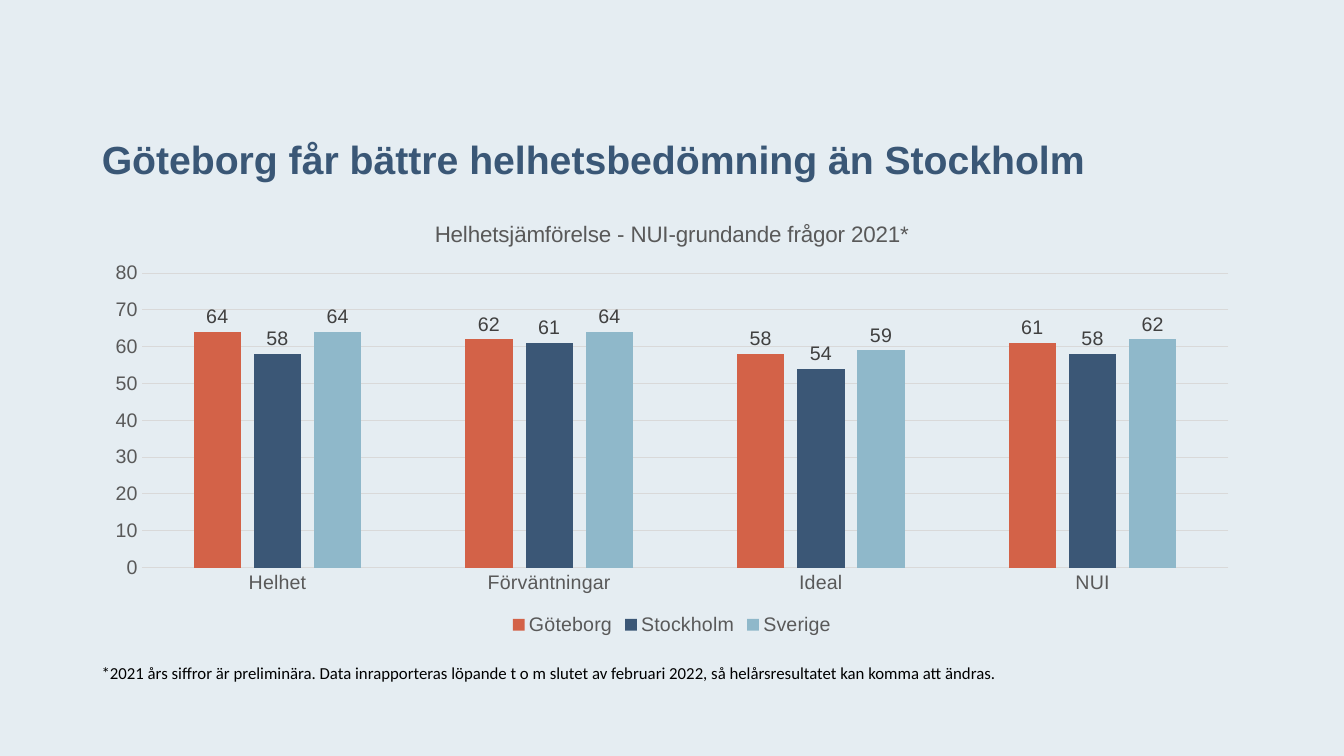
from pptx import Presentation
from pptx.chart.data import CategoryChartData
from pptx.dml.color import RGBColor
from pptx.enum.chart import (XL_CHART_TYPE, XL_LABEL_POSITION,
                             XL_LEGEND_POSITION, XL_TICK_MARK)
from pptx.enum.text import MSO_ANCHOR, PP_ALIGN
from pptx.util import Pt

COLUMN = XL_CHART_TYPE.COLUMN_CLUSTERED
OUTSIDE = XL_LABEL_POSITION.OUTSIDE_END
BELOW = XL_LEGEND_POSITION.BOTTOM
NO_TICK = XL_TICK_MARK.NONE
BOTTOM = MSO_ANCHOR.BOTTOM
LEFT = PP_ALIGN.LEFT

PALE = RGBColor(0xE5, 0xED, 0xF2)
NAVY = RGBColor(0x3A, 0x57, 0x76)
BLACK = RGBColor(0, 0, 0)
GREY = RGBColor(0x59, 0x59, 0x59)
DARK = RGBColor(0x40, 0x40, 0x40)
GRID = RGBColor(0xD9, 0xD9, 0xD9)

GROUPS = ["Helhet", "Förväntningar", "Ideal", "NUI"]
CITIES = [
    ("Göteborg", (64, 62, 58, 61), RGBColor(0xD3, 0x62, 0x48)),
    ("Stockholm", (58, 61, 54, 58), RGBColor(0x3B, 0x57, 0x76)),
    ("Sverige", (64, 64, 59, 62), RGBColor(0x8F, 0xB8, 0xCA)),
]


def set_font(font, size, color, name="Arial", bold=False):
    font.size = Pt(size)
    font.name = name
    font.bold = bold
    font.color.rgb = color


def set_line(line):
    line.color.rgb = GRID
    line.width = Pt(0.75)


def add_title(slide, left, top, width, height):
    title = slide.shapes.title
    title.left, title.top = Pt(left), Pt(top)
    title.width, title.height = Pt(width), Pt(height)
    frame = title.text_frame
    frame.text = "Göteborg får bättre helhetsbedömning än Stockholm"
    frame.vertical_anchor = BOTTOM
    para = frame.paragraphs[0]
    para.alignment = LEFT
    para.line_spacing = Pt(31)
    set_font(para.runs[0].font, 28, NAVY, bold=True)


def add_bars(slide, left, top, width, height):
    data = CategoryChartData()
    data.categories = GROUPS
    for city, scores, _ in CITIES:
        data.add_series(city, scores)
    chart = slide.shapes.add_chart(COLUMN, Pt(left), Pt(top), Pt(width),
                                   Pt(height), data).chart
    set_font(chart.font, 10, BLACK)

    # Heading
    chart.has_title = True
    head = chart.chart_title
    head.include_in_layout = False
    head.text_frame.text = "Helhetsjämförelse - NUI-grundande frågor 2021*"
    set_font(head.text_frame.paragraphs[0].runs[0].font, 16, GREY)

    # Legend
    chart.has_legend = True
    chart.legend.position = BELOW
    chart.legend.include_in_layout = False
    set_font(chart.legend.font, 14, GREY)

    # Axes
    for axis in (chart.category_axis, chart.value_axis):
        axis.major_tick_mark = axis.minor_tick_mark = NO_TICK
        set_font(axis.tick_labels.font, 14, GREY)
    set_line(chart.category_axis.format.line)
    scale = chart.value_axis
    scale.minimum_scale, scale.maximum_scale = 0, 80
    scale.major_unit = 10
    scale.format.line.fill.background()
    set_line(scale.major_gridlines.format.line)

    # Bars and their values
    plot = chart.plots[0]
    plot.gap_width = 219
    plot.overlap = -27
    plot.vary_by_categories = False
    for bars, (_, _, color) in zip(plot.series, CITIES):
        bars.format.fill.solid()
        bars.format.fill.fore_color.rgb = color
        labels = bars.data_labels
        labels.show_value = True
        labels.position = OUTSIDE
        set_font(labels.font, 14, DARK)


def add_note(slide, left, top, width, height):
    box = slide.shapes.add_textbox(Pt(left), Pt(top), Pt(width), Pt(height))
    frame = box.text_frame
    frame.word_wrap = True
    frame.text = ("*2021 års siffror är preliminära. Data inrapporteras löpande "
                  "t o m slutet av februari 2022, så helårsresultatet kan komma "
                  "att ändras.")
    set_font(frame.paragraphs[0].runs[0].font, 12, BLACK, "Calibri")


def main():
    deck = Presentation()
    deck.slide_width, deck.slide_height = Pt(960), Pt(540)
    slide = deck.slides.add_slide(deck.slide_layouts[5])
    slide.background.fill.solid()
    slide.background.fill.fore_color.rgb = PALE
    add_title(slide, 65.5, 29.5, 828, 104.5)
    add_bars(slide, 66, 144, 828, 313)
    add_note(slide, 65.5, 470, 681, 21.5)
    deck.save("out.pptx")


if __name__ == "__main__":
    main()
